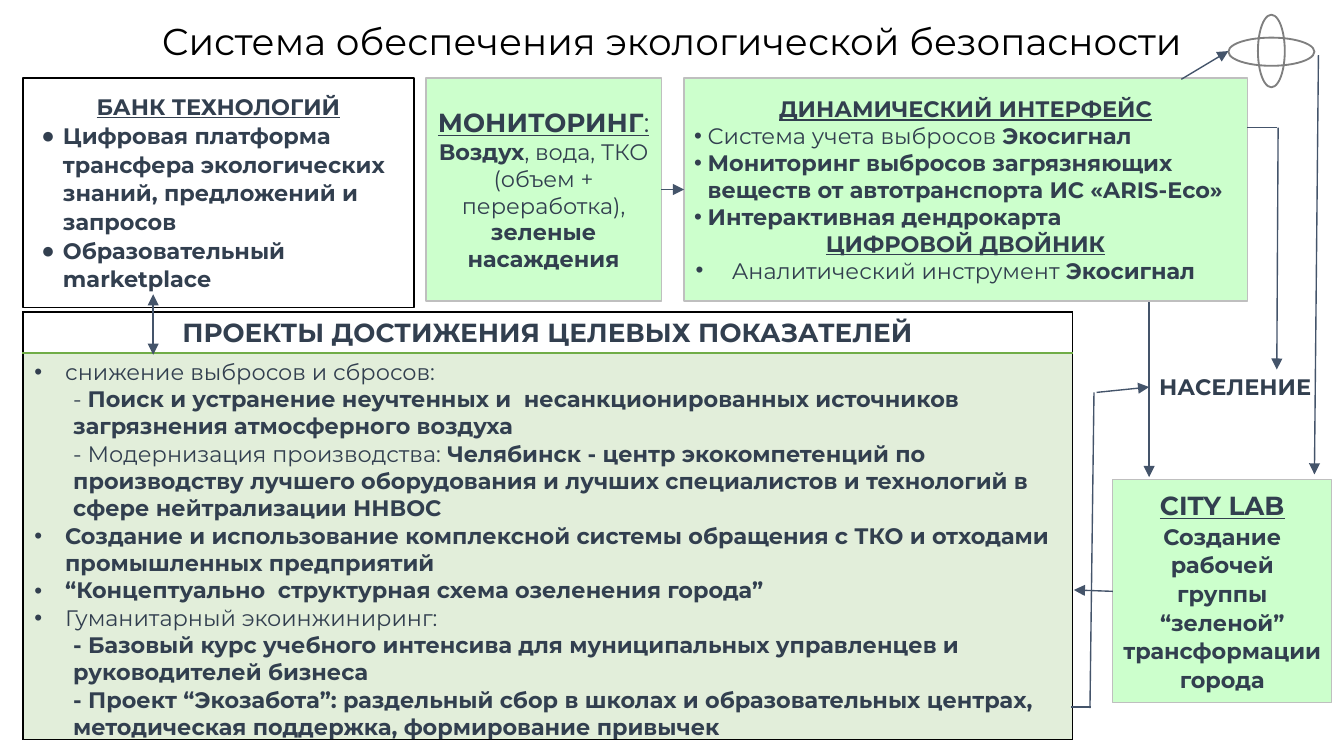
from lxml import etree
from pptx import Presentation
from pptx.dml.color import RGBColor
from pptx.enum.shapes import MSO_CONNECTOR as Connector, MSO_SHAPE as Shape
from pptx.enum.text import MSO_ANCHOR as Anchor, PP_ALIGN as Align
from pptx.oxml.ns import qn
from pptx.util import Inches, Pt

FONT = "Montserrat"
INSETS = (0.3 / 4, 0.15 / 4)
COLORS = {
    "title": "000000", "text": "323F4F", "frame": "000000", "mint": "CCFFCC",
    "mint_line": "BFBFBF", "green": "70AD47", "orbit": "7F7F7F", "arrow": "44546A",
}


def rgb(name):
    return RGBColor.from_string(COLORS[name])


def para(*runs, size=12, align=Align.LEFT, spacing=None, indent=None, bullet=None, color="text"):
    """Describe a paragraph; runs are (text, flags) with b = bold, u = underline."""
    return dict(runs=runs, size=size, align=align, spacing=spacing,
                indent=indent, bullet=bullet, color=color)


def centered(*runs, **options):
    return para(*runs, align=Align.CENTER, **options)


def set_indent(paragraph, indent, bullet):
    properties = paragraph._p.get_or_add_pPr()
    left, first = indent
    properties.set("marL", str(Inches(left)))
    properties.set("indent", str(Inches(first)))
    if bullet:
        color = etree.SubElement(properties, qn("a:buClr"))
        etree.SubElement(color, qn("a:srgbClr"), val=COLORS["text"])
        etree.SubElement(properties, qn("a:buFont"), typeface="Arial")
        etree.SubElement(properties, qn("a:buChar"), char=bullet)


def write(frame, paragraphs):
    for index, content in enumerate(paragraphs):
        paragraph = frame.add_paragraph() if index else frame.paragraphs[0]
        paragraph.alignment = content["align"]
        if content["spacing"]:
            paragraph.line_spacing = content["spacing"]
        if content["indent"]:
            set_indent(paragraph, content["indent"], content["bullet"])
        for text, flags in content["runs"]:
            run = paragraph.add_run()
            run.text = text
            run.font.name = FONT
            run.font.size = Pt(content["size"])
            run.font.bold = "b" in flags
            run.font.underline = "u" in flags
            run.font.color.rgb = rgb(content["color"])


def set_margins(holder, insets=INSETS):
    holder.margin_left = holder.margin_right = Inches(insets[0])
    holder.margin_top = holder.margin_bottom = Inches(insets[1])


def fill_frame(frame, paragraphs, anchor, insets=INSETS):
    frame.word_wrap = True
    frame.vertical_anchor = anchor
    set_margins(frame, insets)
    write(frame, paragraphs)


def add_text(slide, box, paragraphs, anchor=Anchor.TOP):
    text_box = slide.shapes.add_textbox(*map(Inches, box))
    fill_frame(text_box.text_frame, paragraphs, anchor)


def add_figure(slide, kind, box, line, width=0.75, fill=None):
    shape = slide.shapes.add_shape(kind, *map(Inches, box))
    shape.shadow.inherit = False
    shape.line.color.rgb = rgb(line)
    shape.line.width = Pt(width)
    if fill:
        shape.fill.solid()
        shape.fill.fore_color.rgb = rgb(fill)
    else:
        shape.fill.background()
    return shape


def add_mint_box(slide, box, paragraphs):
    shape = add_figure(slide, Shape.RECTANGLE, box, "mint_line", fill="mint")
    fill_frame(shape.text_frame, paragraphs, Anchor.MIDDLE)


def add_line(slide, start, end, ends=()):
    line = slide.shapes.add_connector(Connector.STRAIGHT, *map(Inches, start + end))
    line.line.color.rgb = rgb("arrow")
    line.line.width = Pt(0.75)
    outline = line._element.spPr.find(qn("a:ln"))
    for tag in ends:
        etree.SubElement(outline, qn(tag), type="triangle")
    etree.SubElement(line._element.spPr, qn("a:effectLst"))


def set_borders(cell, top, bottom):
    properties = cell._tc.get_or_add_tcPr()
    sides = {"L": "frame", "R": "frame", "T": top, "B": bottom}
    for index, (side, color) in enumerate(sides.items()):
        border = etree.Element(qn(f"a:ln{side}"), w=str(Pt(1)))
        fill = etree.SubElement(border, qn("a:solidFill"))
        etree.SubElement(fill, qn("a:srgbClr"), val=COLORS[color])
        properties.insert(index, border)


def add_projects_table(slide, box, header, body):
    graphic = slide.shapes.add_table(2, 2, *map(Inches, box))
    table = graphic.table
    table.first_row = table.horz_banding = False
    for column, width in zip(table.columns, (1.86, 5.95)):
        column.width = Inches(width)
    for row, height in zip(table.rows, (0.3, 2.49)):
        row.height = Inches(height)
    graphic.height = Inches(box[3])
    rows = ((header, "frame", "green"), (body, "green", "frame"))
    for index, (paragraphs, top, bottom) in enumerate(rows):
        cell, spanned = table.cell(index, 0), table.cell(index, 1)
        cell.merge(spanned)
        set_margins(cell)
        write(cell.text_frame, paragraphs)
        for part in (cell, spanned):
            if index:
                part.fill.solid()
                part.fill.fore_color.rgb = rgb("green")
                color = part._tc.tcPr.find(".//" + qn("a:srgbClr"))
                etree.SubElement(color, qn("a:alpha"), val="20000")
            else:
                part.fill.background()
            set_borders(part, top, bottom)


def item(*runs):
    return para(*runs, indent=(0.24, -0.23), bullet="•")


def subitem(*runs):
    return para(*runs, indent=(0.3, 0))


def add_boxes(slide):
    add_mint_box(slide, (3.17, 0.58, 1.75, 1.66), [
        centered(("МОНИТОРИНГ", "bu"), (":", "u"), size=14),
        centered(("Воздух", "b"), (", вода, ТКО (объем + переработка), ", ""),
                 ("зеленые насаждения", "b")),
    ])
    near = dict(indent=(0.1, -0.1), bullet="•")
    add_mint_box(slide, (5.09, 0.58, 4.19, 1.66), [
        centered(("ДИНАМИЧЕСКИЙ ИНТЕРФЕЙС", "bu")),
        para(("Система учета выбросов ", ""), ("Экосигнал", "b"), **near),
        para(("Мониторинг выбросов загрязняющих веществ от автотранспорта ИС «ARIS-Eco»", "b"),
             **near),
        para(("Интерактивная дендрокарта", "b"), **near),
        centered(("ЦИФРОВОЙ ДВОЙНИК", "bu")),
        para(("Аналитический инструмент ", ""), ("Экосигнал", "b"),
             indent=(0.28, -0.27), bullet="•"),
    ])
    add_mint_box(slide, (8.28, 3.57, 1.63, 1.66), [
        centered(("CITY LAB", "bu"), size=14),
        centered(("Создание рабочей группы “зеленой” трансформации города", "b"), spacing=1.07),
    ])
    bank = add_figure(slide, Shape.RECTANGLE, (0.17, 0.58, 2.91, 1.71), "frame")
    dot = dict(indent=(0.2, -0.16), bullet="●", spacing=1.07)
    fill_frame(bank.text_frame, [
        centered(("БАНК ТЕХНОЛОГИЙ", "bu"), spacing=1.07),
        para(("Цифровая платформа трансфера экологических знаний, предложений и запросов", "b"),
             **dot),
        para(("Образовательный marketplace", "b"), **dot),
    ], Anchor.TOP, (0.1, 0.1))


def add_projects(slide):
    header = [centered(("ПРОЕКТЫ ДОСТИЖЕНИЯ ЦЕЛЕВЫХ ПОКАЗАТЕЛЕЙ", "b"), size=14)]
    body = [
        item(("снижение выбросов и сбросов:", "")),
        subitem(("- ", ""), ("Поиск и устранение неучтенных и  несанкционированных источников "
                             "загрязнения атмосферного воздуха", "b")),
        subitem(("- Модернизация производства: ", ""),
                ("Челябинск - центр экокомпетенций по производству лучшего оборудования и "
                 "лучших специалистов и технологий в сфере нейтрализации ННВОС", "b")),
        item(("Создание и использование комплексной системы обращения с ТКО и отходами "
              "промышленных предприятий", "b")),
        item(("“Концептуально  структурная схема озеленения города”", "b")),
        item(("Гуманитарный экоинжиниринг:", "")),
        subitem(("- Базовый курс учебного интенсива для муниципальных управленцев и "
                 "руководителей бизнеса", "b")),
        subitem(("- Проект “Экозабота”: раздельный сбор в школах и образовательных центрах, "
                 "методическая поддержка, формирование привычек", "b")),
    ]
    add_projects_table(slide, (0.17, 2.32, 7.81, 3.18), header, body)


def add_links(slide):
    head, tail = "a:headEnd", "a:tailEnd"
    for start, end, ends in (
        ((4.92, 1.41), (5.09, 1.41), (tail,)),       # monitoring to interface
        ((7.97, 5.26), (8.12, 5.26), ()),            # projects to population
        ((8.11, 5.27), (8.14, 2.92), ()),
        ((8.16, 2.92), (8.55, 2.88), (tail,)),
        ((8.28, 4.4), (7.99, 4.39), (tail,)),        # city lab to projects
        ((8.79, 0.59), (9.14, 0.38), (tail,)),       # interface to orbits
        ((8.55, 2.25), (8.55, 3.55), (tail,)),       # interface to city lab
        ((9.28, 0.95), (9.5, 0.95), ()),             # interface to population
        ((9.51, 0.95), (9.5, 2.75), (tail,)),
        ((1.14, 2.19), (1.14, 2.64), (head, tail)),  # bank and projects
        ((9.81, 0.41), (9.78, 3.53), (tail,)),       # orbits to city lab
    ):
        add_line(slide, start, end, ends)


def main():
    presentation = Presentation()
    presentation.slide_width = Inches(10)
    presentation.slide_height = Inches(10 * 9 / 16)
    slide = presentation.slides.add_slide(presentation.slide_layouts[6])

    # Title
    add_text(slide, (0, 0.03, 10, 0.59), [
        centered(("Система обеспечения экологической безопасности", ""),
                 size=20, spacing=0.9, color="title")], Anchor.MIDDLE)
    # Blocks of the system
    add_projects(slide)
    add_boxes(slide)
    add_text(slide, (8.55, 2.74, 1.29, 0.28), [para(("НАСЕЛЕНИЕ", "b"))])
    # Crossed orbits
    for box in ((9.14, 0.28, 0.64, 0.21), (9.36, 0.11, 0.2, 0.54)):
        add_figure(slide, Shape.OVAL, box, "orbit", width=1)
    # Links between the blocks
    add_links(slide)
    presentation.save("out.pptx")


if __name__ == "__main__":
    main()
